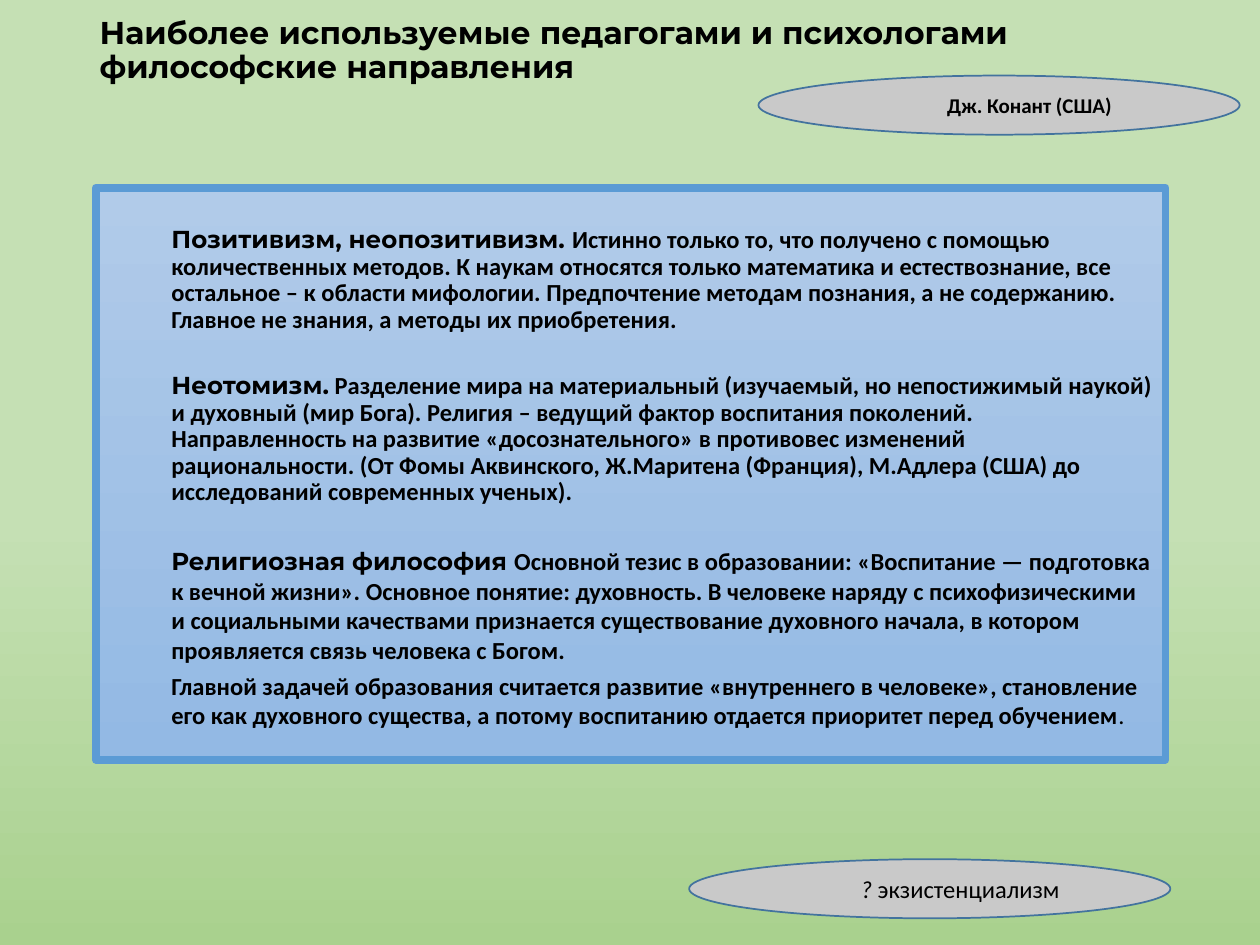
from pptx import Presentation
from pptx.dml.color import RGBColor
from pptx.enum.shapes import MSO_SHAPE
from pptx.enum.text import MSO_ANCHOR, PP_ALIGN
from pptx.util import Pt

RECTANGLE, OVAL = MSO_SHAPE.RECTANGLE, MSO_SHAPE.OVAL
TOP, MIDDLE = MSO_ANCHOR.TOP, MSO_ANCHOR.MIDDLE
LEFT, CENTER = PP_ALIGN.LEFT, PP_ALIGN.CENTER
HEADING_FONT, TEXT_FONT = "Montserrat", "Calibri"


def add_span(para, text, **formats):
    span = para.add_run()
    span.text = text
    span.font.color.rgb = RGBColor.from_string("000000")
    for name, value in formats.items():
        setattr(span.font, name, value)


def fill_downward(fill, stops):
    """Give a fill a two-stop gradient that runs from top to bottom."""
    fill.gradient()
    fill.gradient_angle = 270
    for stop, (position, colour) in zip(fill.gradient_stops, stops):
        stop.position = position
        stop.color.rgb = RGBColor.from_string(colour)


deck = Presentation()
deck.slide_width, deck.slide_height = Pt(720), Pt(540)
page = deck.slides.add_slide(deck.slide_layouts[5])
fill_downward(page.background.fill, [(0.55, "C5E0B4"), (1, "A9D18E")])

# Title
title = page.shapes.title
title_place = {"left": 49.7, "top": 7.2, "width": 629.3, "height": 43.9}
for name, value in title_place.items():
    setattr(title, name, Pt(value))
title.text_frame.vertical_anchor = MIDDLE
title.text_frame.word_wrap = True
para = title.text_frame.paragraphs[0]
para.alignment = LEFT
para.line_spacing = 0.9
add_span(para, "Наиболее используемые педагогами и психологами философские направления",
         name=HEADING_FONT, size=Pt(18), bold=True)

# Panel with the schools of philosophy
panel = page.shapes.add_shape(RECTANGLE, Pt(54.7), Pt(107.3), Pt(611.3), Pt(326.9))
panel.shadow.inherit = False
fill_downward(panel.fill, [(0, "B1CBE9"), (1, "93B9E4")])
panel.line.color.rgb = RGBColor.from_string("5B9BD5")
panel.line.width = Pt(4.5)
frame = panel.text_frame
panel_format = {"word_wrap": True, "vertical_anchor": TOP,
                "margin_left": Pt(43.2), "margin_top": Pt(22.8)}
for name, value in panel_format.items():
    setattr(frame, name, value)

# heading, text, closing regular text, line spacing, space before
schools = [
    ("Позитивизм, неопозитивизм. ",
     "Истинно только то, что получено с помощью количественных методов. "
     "К наукам относятся только математика и естествознание, все остальное – "
     "к области мифологии. Предпочтение методам познания, а не содержанию. "
     "Главное не знания, а методы их приобретения.", "", 0.9, 0),
    ("Неотомизм.",
     " Разделение мира на материальный (изучаемый, но непостижимый наукой) "
     "и духовный (мир Бога). Религия – ведущий фактор воспитания поколений. "
     "Направленность на развитие «досознательного» в противовес изменений "
     "рациональности. (От Фомы Аквинского, Ж.Маритена (Франция), М.Адлера (США) "
     "до исследований современных ученых).", "", 0.9, 23),
    ("Религиозная философия ",
     "Основной тезис в образовании: «Воспитание — подготовка к вечной жизни». "
     "Основное понятие: духовность. В человеке наряду с психофизическими "
     "и социальными качествами признается существование духовного начала, "
     "в котором проявляется связь человека с Богом.", "", 1, 23),
    ("",
     "Главной задачей образования считается развитие «внутреннего в человеке», "
     "становление его как духовного существа, а потому воспитанию отдается "
     "приоритет перед обучением", ".", 1, 3.8),
]
for index, (heading, text, ending, spacing, before) in enumerate(schools):
    para = frame.add_paragraph() if index else frame.paragraphs[0]
    para.alignment = LEFT
    para.line_spacing = spacing
    para.space_before = Pt(before)
    spans = [(heading, HEADING_FONT, True), (text, TEXT_FONT, True), (ending, TEXT_FONT, False)]
    for words, font, bold in spans:
        if words:
            add_span(para, words, name=font, size=Pt(14), bold=bold)

# Oval labels: left, top, spans of (text, size, bold, italic)
labels = [
    (433.4, 43.2, [("Дж. Конант (США)", 12, True, False)]),
    (393.8, 491, [("? ", 14, False, True), ("экзистенциализм", 14, False, False)]),
]
for left, top, spans in labels:
    label = page.shapes.add_shape(OVAL, Pt(left), Pt(top), Pt(275), Pt(33.8))
    label.shadow.inherit = False
    label.fill.solid()
    label.fill.fore_color.rgb = RGBColor.from_string("C9C9C9")
    label.line.color.rgb = RGBColor.from_string("43739E")
    label.line.width = Pt(1)
    label.text_frame.word_wrap = True
    label.text_frame.vertical_anchor = MIDDLE
    label.text_frame.margin_left = Pt(42)
    para = label.text_frame.paragraphs[0]
    para.alignment = CENTER
    for words, size, bold, italic in spans:
        add_span(para, words, name=TEXT_FONT, size=Pt(size), bold=bold, italic=italic)

deck.save("out.pptx")
